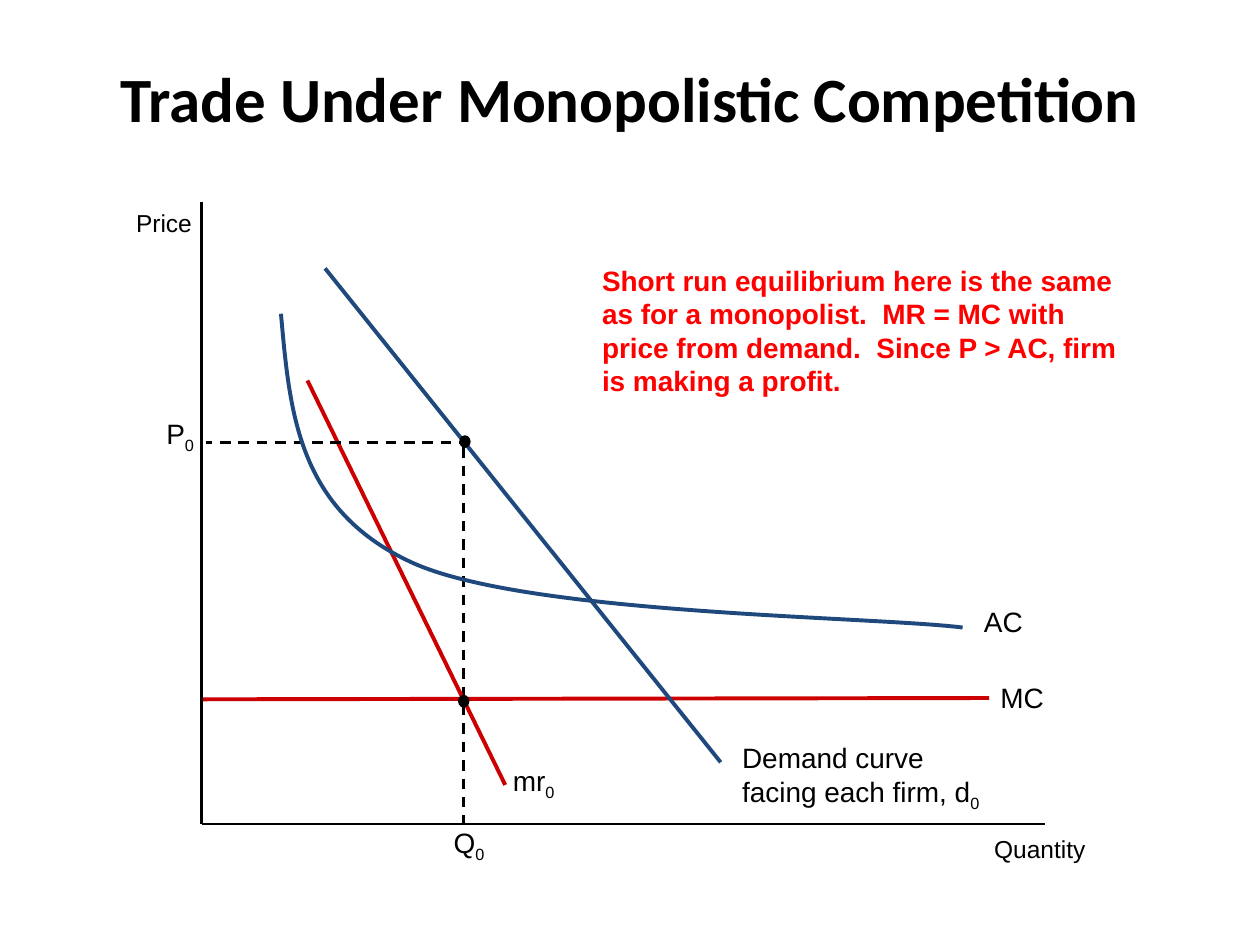
from dataclasses import dataclass

from lxml import etree
from pptx import Presentation
from pptx.dml.color import RGBColor
from pptx.enum.dml import MSO_LINE
from pptx.enum.shapes import MSO_CONNECTOR, MSO_SHAPE
from pptx.enum.text import MSO_ANCHOR, MSO_AUTO_SIZE, PP_ALIGN
from pptx.oxml.ns import qn
from pptx.util import Emu, Pt

STRAIGHT = MSO_CONNECTOR.STRAIGHT
RECTANGLE, OVAL = MSO_SHAPE.RECTANGLE, MSO_SHAPE.OVAL
DASH = MSO_LINE.DASH
TOP, MIDDLE = MSO_ANCHOR.TOP, MSO_ANCHOR.MIDDLE
LEFT, CENTER = PP_ALIGN.LEFT, PP_ALIGN.CENTER
TITLE_ONLY = 5
EMU_PER_PX = 9144  # 100 px to the inch


@dataclass(frozen=True)
class Theme:
    black: RGBColor = RGBColor(0, 0, 0)
    white: RGBColor = RGBColor(255, 255, 255)
    cost_red: RGBColor = RGBColor(0xCC, 0, 0)
    curve_blue: RGBColor = RGBColor(0x1F, 0x49, 0x7D)
    note_red: RGBColor = RGBColor(255, 0, 0)
    title_font: str = "Calibri"
    body_font: str = "Arial"
    title_size: float = 36
    label_size: float = 16
    axis_size: float = 14
    curve_width: float = 2.25
    axis_width: float = 1.5
    outline_width: float = 0.75


THEME = Theme()


@dataclass(frozen=True)
class Box:
    left: int
    top: int
    width: int
    height: int

    def emu(self) -> tuple:
        return tuple(map(px, (self.left, self.top, self.width, self.height)))


@dataclass(frozen=True)
class Label:
    box: Box
    text: str
    subscript: str = ""
    size: float = THEME.label_size
    framed: bool = True
    filled: bool = True


@dataclass(frozen=True)
class Line:
    start: tuple
    end: tuple
    color: RGBColor = THEME.black
    width: float = THEME.axis_width
    dashed: bool = False


@dataclass(frozen=True)
class Dot:
    box: Box


@dataclass(frozen=True)
class Curve:
    """A chain of cubic Béziers: a start point, then three points a segment."""
    points: tuple
    color: RGBColor


@dataclass(frozen=True)
class Note:
    box: Box
    text: str


ORIGIN = (160, 654)
ELEMENTS = (
    Line((160, 555), (785, 554), THEME.cost_red, THEME.curve_width),
    Label(Box(108, 165, 54, 28), "Price", size=THEME.axis_size, filled=False),
    Label(Box(789, 662, 77, 27), "Quantity", size=THEME.axis_size),
    Label(Box(794, 540, 45, 31), "MC"),
    Label(Box(781, 480, 36, 30), "AC"),
    Line((368, 355), (368, 654), dashed=True),
    Line((244, 302), (401, 623), THEME.cost_red, THEME.curve_width),
    Line((258, 213), (572, 605), THEME.curve_blue, THEME.curve_width),
    Label(Box(589, 588, 203, 49), "Demand curve facing each firm, d", "0", framed=False),
    Label(Box(407, 606, 39, 38), "mr", "0", framed=False),
    Line((160, 351), (369, 351), dashed=True),
    Dot(Box(365, 346, 8, 9)),
    Curve(((223, 249), (230, 327), (236, 404), (326, 446),
           (416, 488), (691, 489), (764, 498)), THEME.curve_blue),
    Label(Box(132, 331, 31, 30), "P", "0"),
    Label(Box(360, 655, 31, 30), "Q", "0"),
    Line(ORIGIN, (829, 654)),
    Line(ORIGIN, (160, 160)),
    Note(Box(468, 204, 443, 117),
         "Short run equilibrium here is the same as for a monopolist.  "
         "MR = MC with price from demand.  Since P > AC, firm is making a profit."),
    Dot(Box(364, 552, 8, 9)),
)


def px(length: int) -> Emu:
    return Emu(length * EMU_PER_PX)


def add_run(paragraph, text: str, size: float, color: RGBColor = THEME.black,
            font: str = THEME.body_font, bold: bool = False, subscript: bool = False) -> None:
    run = paragraph.add_run()
    run.text = text
    run.font.name, run.font.size, run.font.bold = font, Pt(size), bold
    run.font.color.rgb = color
    if subscript:
        run.font._element.set("baseline", "-25000")


def add_outlined_shape(slide, preset, box: Box, outline: RGBColor):
    shape = slide.shapes.add_shape(preset, *box.emu())
    shape.shadow.inherit = False
    shape.line.color.rgb = outline
    shape.line.width = Pt(THEME.outline_width)
    return shape


def draw_label(slide, label: Label) -> None:
    if label.framed:
        shape = add_outlined_shape(slide, RECTANGLE, label.box, THEME.white)
        if label.filled:
            shape.fill.solid()
            shape.fill.fore_color.rgb = THEME.white
        else:
            shape.fill.background()
    else:
        shape = slide.shapes.add_textbox(*label.box.emu())
    frame = shape.text_frame
    frame.word_wrap = True
    frame.vertical_anchor = TOP
    frame.margin_left = frame.margin_top = frame.margin_right = frame.margin_bottom = 0
    paragraph = frame.paragraphs[0]
    paragraph.alignment = LEFT
    add_run(paragraph, label.text, label.size)
    if label.subscript:
        add_run(paragraph, label.subscript, label.size, subscript=True)


def draw_line(slide, line: Line) -> None:
    connector = slide.shapes.add_connector(STRAIGHT, *map(px, line.start + line.end))
    connector.line.color.rgb = line.color
    connector.line.width = Pt(line.width)
    if line.dashed:
        connector.line.dash_style = DASH
    etree.SubElement(connector._element.spPr, qn("a:effectLst"))


def draw_dot(slide, dot: Dot) -> None:
    shape = add_outlined_shape(slide, OVAL, dot.box, THEME.black)
    shape.fill.solid()
    shape.fill.fore_color.rgb = THEME.black


def draw_curve(slide, curve: Curve) -> None:
    """Build straight segments, then merge each three into one cubic Bézier."""
    builder = slide.shapes.build_freeform(*curve.points[0], scale=EMU_PER_PX)
    builder.add_line_segments(curve.points[1:], close=False)
    shape = builder.convert_to_shape()
    shape.shadow.inherit = False
    shape.fill.background()
    shape.line.color.rgb = curve.color
    shape.line.width = Pt(THEME.curve_width)
    segments = list(shape._element.iter(qn("a:lnTo")))
    outline = segments[0].getparent()
    for first in range(0, len(segments), 3):
        bezier = etree.SubElement(outline, qn("a:cubicBezTo"))
        for segment in segments[first:first + 3]:
            bezier.append(segment[0])
            outline.remove(segment)


def draw_note(slide, note: Note) -> None:
    frame = slide.shapes.add_textbox(*note.box.emu()).text_frame
    frame.word_wrap = True
    frame.auto_size = MSO_AUTO_SIZE.SHAPE_TO_FIT_TEXT
    add_run(frame.paragraphs[0], note.text, THEME.label_size, THEME.note_red, bold=True)


def draw_title(slide, text: str) -> None:
    title = slide.shapes.title
    title.left, title.top, title.width, title.height = Box(50, 30, 900, 95).emu()
    title.text_frame.vertical_anchor = MIDDLE
    paragraph = title.text_frame.paragraphs[0]
    paragraph.alignment = CENTER
    add_run(paragraph, text, THEME.title_size, font=THEME.title_font, bold=True)


DRAWERS = {Label: draw_label, Line: draw_line, Dot: draw_dot, Curve: draw_curve, Note: draw_note}


def main() -> None:
    presentation = Presentation()
    presentation.slide_width, presentation.slide_height = px(1000), px(750)
    slide = presentation.slides.add_slide(presentation.slide_layouts[TITLE_ONLY])
    draw_title(slide, "Trade Under Monopolistic Competition")
    for element in ELEMENTS:
        DRAWERS[type(element)](slide, element)
    presentation.save("out.pptx")


if __name__ == "__main__":
    main()
